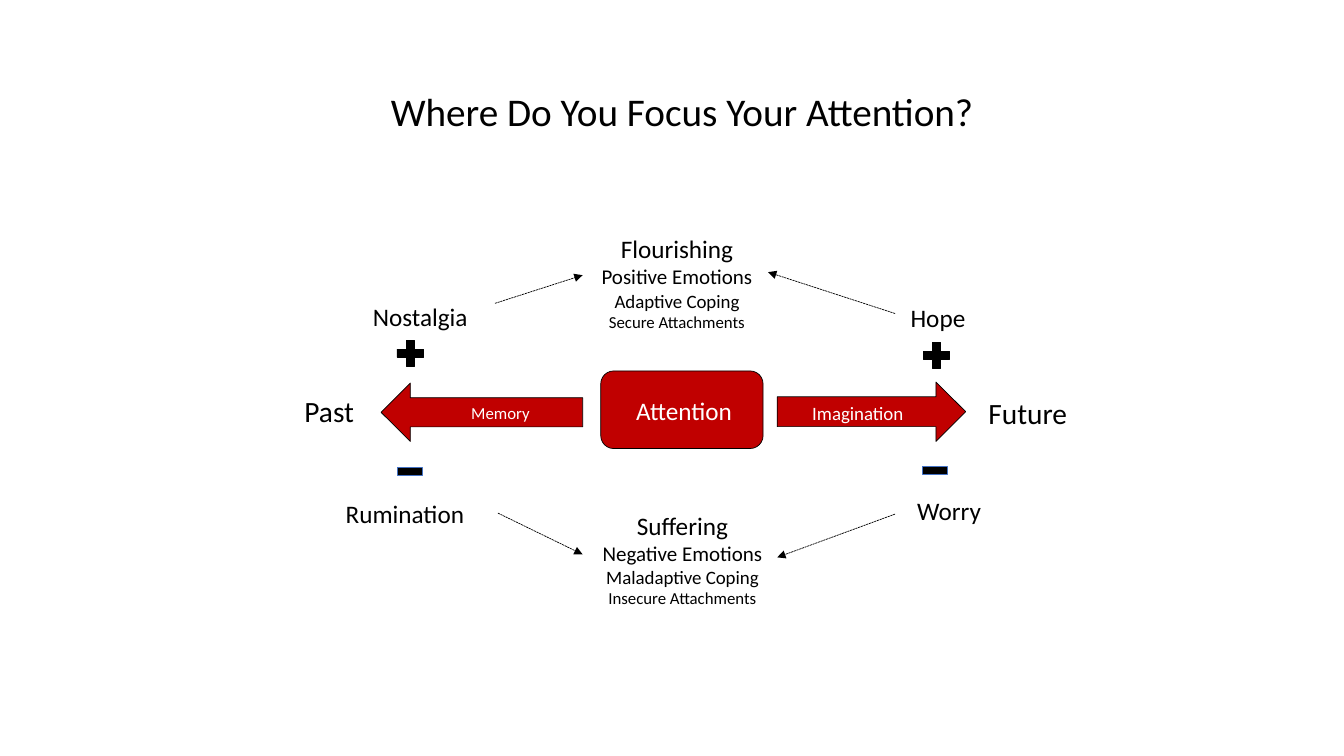
import pptx
import pptx.util
import pptx.dml.color
import pptx.enum.dml
import pptx.enum.shapes
import pptx.enum.text
import pptx.oxml
import pptx.oxml.ns
from dataclasses import dataclass

SHAPE = pptx.enum.shapes.MSO_SHAPE
ALIGN = pptx.enum.text.PP_ALIGN


@dataclass(frozen=True)
class Theme:
    font: str = "Calibri"
    red: str = "C00000"
    black: str = "000000"
    white: str = "FFFFFF"
    blue: str = "4472C4"
    line: float = 0.5
    title: float = 28
    time: float = 21
    head: float = 18
    second: float = 15
    third: float = 13.5
    small: float = 12


THEME = Theme()
OUTCOME_SIZES = (THEME.head, THEME.second, THEME.third, THEME.small)

# Every box is left, top, width, height in percent of the slide.
BLOCKS = [
    (SHAPE.ROUNDED_RECTANGLE, (44.7, 49.07, 12.08, 10.27), 0, THEME.red, THEME.black),
    (SHAPE.RIGHT_ARROW, (57.83, 50.53, 14.03, 7.87), 0, THEME.red, THEME.black),
    (SHAPE.RIGHT_ARROW, (28.35, 50.67, 15, 7.73), 180, THEME.red, THEME.black),
    (SHAPE.MATH_PLUS, (29.18, 44.4, 2.7, 4.67), 0, THEME.black, THEME.black),
    (SHAPE.MATH_PLUS, (68.33, 44.67, 2.7, 4.67), 0, THEME.black, THEME.black),
    (SHAPE.MATH_MINUS, (29.25, 60.13, 2.48, 4.4), 0, THEME.black, THEME.blue),
    (SHAPE.MATH_MINUS, (68.33, 60, 2.48, 4.4), 0, THEME.black, THEME.blue),
]
LABELS = [
    ("Where Do You Focus Your Attention?", (22.65, 10.93, 56.18, 7.6), THEME.title, THEME.black, ALIGN.CENTER),
    ("Attention", (45.53, 51.6, 10.73, 5.33), THEME.head, THEME.white, ALIGN.CENTER),
    ("Imagination", (59.7, 52.53, 8.85, 4.4), THEME.third, THEME.white, ALIGN.LEFT),
    ("Memory", (33, 52.67, 8.48, 4), THEME.small, THEME.white, ALIGN.CENTER),
    ("Future", (72.38, 51.6, 8.18, 6), THEME.time, THEME.black, ALIGN.CENTER),
    ("Past", (21.53, 51.33, 5.93, 6), THEME.time, THEME.black, ALIGN.CENTER),
    ("Hope", (66.6, 39.33, 6.38, 5.33), THEME.head, THEME.black, ALIGN.CENTER),
    ("Worry", (66.53, 64.8, 8.18, 5.33), THEME.head, THEME.black, ALIGN.CENTER),
    ("Nostalgia", (27, 39.2, 9.45, 5.33), THEME.head, THEME.black, ALIGN.LEFT),
    ("Rumination", (24.98, 65.2, 12.08, 5.33), THEME.head, THEME.black, ALIGN.LEFT),
]
OUTCOMES = [
    (("Flourishing", "Positive Emotions", "Adaptive Coping", "Secure Attachments"),
     (43.88, 30.27, 12.98, 14.53)),
    (("Suffering", "Negative Emotions", "Maladaptive Coping", "Insecure Attachments"),
     (42.23, 66.8, 17.1, 14.53)),
]
PATHS = [
    (36.83, 40.13, 43.35, 36.4),
    (37.05, 67.87, 43.35, 73.33),
    (66.6, 41.47, 57.15, 36),
    (66.6, 68, 57.83, 73.73),
]

prs = pptx.Presentation()
prs.slide_width = pptx.util.Inches(13.33)
prs.slide_height = pptx.util.Inches(7.5)
slide = prs.slides.add_slide(prs.slide_layouts[6])


def place(box):
    sides = (prs.slide_width, prs.slide_height) * 2
    return [round(side * share / 100) for side, share in zip(sides, box)]


def rgb(value):
    return pptx.dml.color.RGBColor.from_string(value)


def add_block(kind, box, rotation, fill, line):
    sp = slide.shapes.add_shape(kind, *place(box))
    sp.shadow.inherit = False
    sp.rotation = rotation
    sp.fill.solid()
    sp.fill.fore_color.rgb = rgb(fill)
    sp.line.color.rgb = rgb(line)
    sp.line.width = pptx.util.Pt(THEME.line)


def add_text(lines, box, sizes, color, align):
    tf = slide.shapes.add_textbox(*place(box)).text_frame
    tf.word_wrap = True
    tf.auto_size = pptx.enum.text.MSO_AUTO_SIZE.SHAPE_TO_FIT_TEXT
    tf.text = "\n".join(lines)
    for p, size in zip(tf.paragraphs, sizes):
        p.alignment = align
        font = p.runs[0].font
        font.name = THEME.font
        font.size = pptx.util.Pt(size)
        font.color.rgb = rgb(color)


def add_path(ends):
    sp = slide.shapes.add_connector(pptx.enum.shapes.MSO_CONNECTOR.STRAIGHT, *place(ends))
    sp.line.color.rgb = rgb(THEME.black)
    sp.line.width = pptx.util.Pt(THEME.line)
    sp.line.dash_style = pptx.enum.dml.MSO_LINE.SQUARE_DOT
    ns = pptx.oxml.ns.nsdecls("a")
    ln = sp.line._get_or_add_ln()
    ln.append(pptx.oxml.parse_xml(f'<a:tailEnd {ns} type="triangle"/>'))
    ln.getparent().append(pptx.oxml.parse_xml(f"<a:effectLst {ns}/>"))


for block in BLOCKS:
    add_block(*block)
for text, box, size, color, align in LABELS:
    add_text([text], box, [size], color, align)
for lines, box in OUTCOMES:
    add_text(lines, box, OUTCOME_SIZES, THEME.black, ALIGN.CENTER)
for ends in PATHS:
    add_path(ends)

prs.save("out.pptx")
